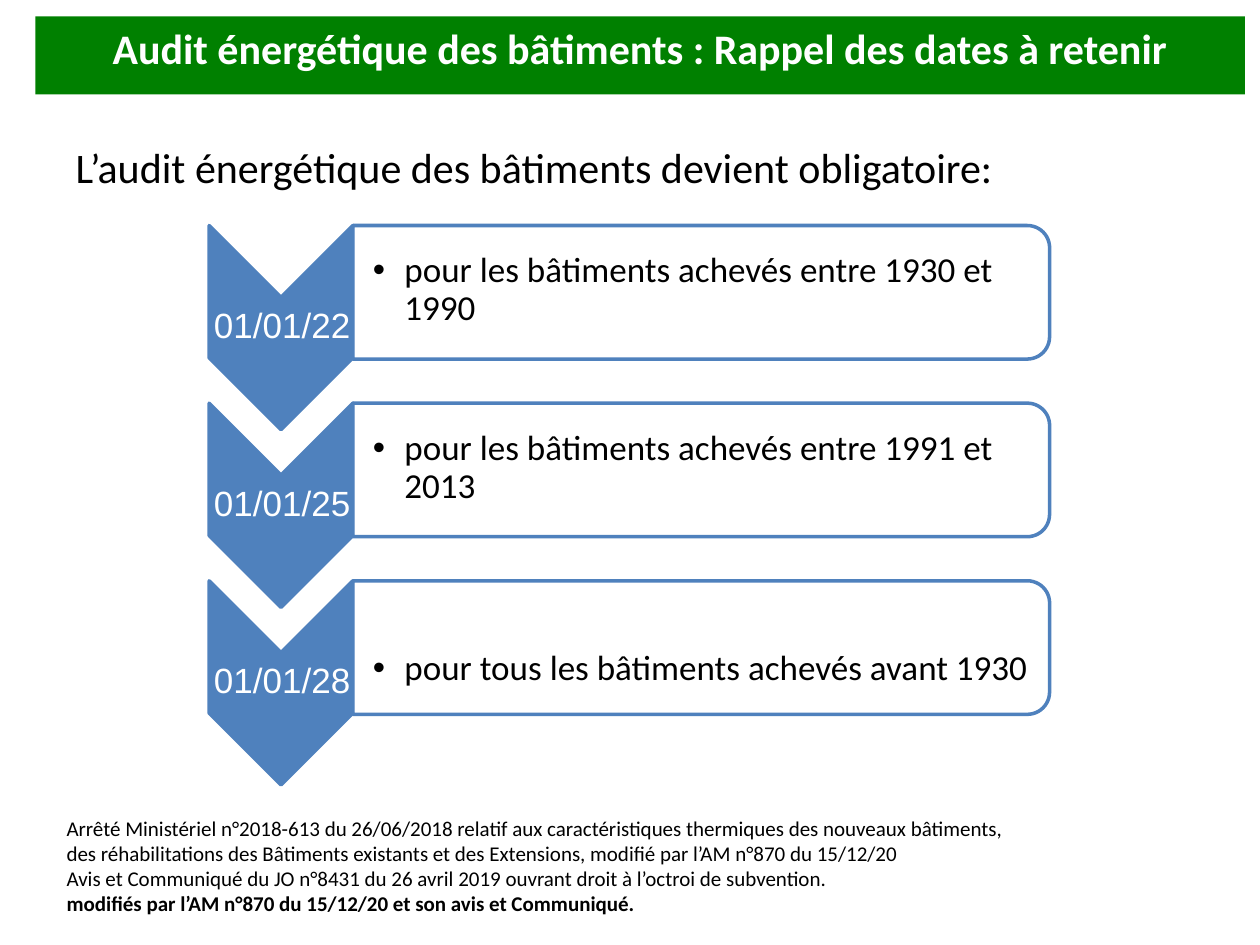
from dataclasses import dataclass

from lxml.etree import SubElement
from pptx import Presentation
from pptx.dml.color import RGBColor
from pptx.enum.shapes import MSO_SHAPE
from pptx.enum.text import MSO_ANCHOR, MSO_AUTO_SIZE, PP_ALIGN
from pptx.oxml.ns import qn
from pptx.util import Inches, Pt


@dataclass(frozen=True)
class Theme:
    green: RGBColor = RGBColor(0, 128, 0)
    blue: RGBColor = RGBColor(79, 129, 189)
    white: RGBColor = RGBColor(255, 255, 255)
    black: RGBColor = RGBColor(0, 0, 0)
    head: int = 24
    step: int = 20
    note: int = 12
    sans: str = "Calibri"
    date: str = "Arial"


THEME = Theme()
TITLE = "Audit énergétique des bâtiments : Rappel des dates à retenir"
LEAD = "L’audit énergétique des bâtiments devient obligatoire:"
# Date, text, top inset of the text
STEPS = [
    ("01/01/22", "pour les bâtiments achevés entre 1930 et 1990", 0.01),
    ("01/01/25", "pour les bâtiments achevés entre 1991 et 2013", 0.01),
    ("01/01/28", "pour tous les bâtiments achevés avant 1930", 0.38),
]
NOTES = [
    "Arrêté Ministériel n°2018-613 du 26/06/2018 relatif aux caractéristiques "
    "thermiques des nouveaux bâtiments, des réhabilitations des Bâtiments "
    "existants et des Extensions, modifié par l’AM n°870 du 15/12/20",
    "Avis et Communiqué du JO n°8431 du 26 avril 2019 ouvrant droit à l’octroi "
    "de subvention.",
    "modifiés par l’AM n°870 du 15/12/20 et son avis et Communiqué.",
]
TOP, PITCH = 1.79, 1.41


def style(para, size, color=THEME.black, face=THEME.sans, bold=False):
    font = para.font
    font.size, font.name, font.bold = Pt(size), face, bold
    font.color.rgb = color


def indent(para, left, hang, mark=None):
    """Set the indent of a paragraph and its bullet, if any."""
    props = para._p.get_or_add_pPr()
    props.set("marL", str(Inches(left)))
    props.set("indent", str(Inches(-hang)))
    if mark:
        SubElement(props, qn("a:buFont"), typeface=THEME.date)
        SubElement(props, qn("a:buChar"), char=mark)
    else:
        SubElement(props, qn("a:buNone"))


def place(shape, left, top, width, height):
    shape.left, shape.top = Inches(left), Inches(top)
    shape.width, shape.height = Inches(width), Inches(height)


def add_head(slide):
    """Fill the title bar and the lead sentence."""
    title, body = slide.shapes.title, slide.placeholders[1]
    place(title, 0.28, 0.13, 9.6, 0.62)
    place(body, 0.5, 1.07, 9, 4.95)
    title.fill.solid()
    title.fill.fore_color.rgb = THEME.green
    for shape, text in ((title, TITLE), (body, LEAD)):
        frame = shape.text_frame
        frame.text = text
        frame.auto_size = MSO_AUTO_SIZE.NONE
        frame.vertical_anchor = MSO_ANCHOR.TOP
    name, lead = title.text_frame.paragraphs[0], body.text_frame.paragraphs[0]
    name.alignment = PP_ALIGN.CENTER
    style(name, THEME.head, THEME.white, bold=True)
    indent(lead, 0, 0)
    lead.space_before = Pt(0)
    style(lead, THEME.head)


def add_turned(slide, kind, left, top, width, height, color):
    """Add a shape turned by 90° that covers the given area."""
    shift = (width - height) / 2
    shape = slide.shapes.add_shape(
        kind, Inches(left + shift), Inches(top - shift),
        Inches(height), Inches(width))
    shape.rotation = 90
    shape.shadow.inherit = False
    shape.fill.solid()
    shape.fill.fore_color.rgb = color
    shape.line.color.rgb = THEME.blue
    shape.line.width = Pt(2)
    return shape


def add_label(slide, text, left, top, width, height, inset=0.01, head=0.01):
    """Add a centred-height text box and return its paragraph."""
    box = slide.shapes.add_textbox(
        Inches(left), Inches(top), Inches(width), Inches(height))
    frame = box.text_frame
    frame.word_wrap = True
    frame.vertical_anchor = MSO_ANCHOR.MIDDLE
    frame.margin_left, frame.margin_top = Inches(inset), Inches(head)
    frame.margin_right = frame.margin_bottom = Inches(0.01)
    para = frame.paragraphs[0]
    para.text = text
    para.line_spacing = 0.9
    return para


def add_step(slide, top, date, text, head):
    """Add one chevron with its date and the panel beside it."""
    add_turned(slide, MSO_SHAPE.CHEVRON, 1.66, top, 1.14, 1.62, THEME.blue)
    day = add_label(slide, date, 1.67, top + 0.56, 1.14, 0.49)
    day.alignment = PP_ALIGN.CENTER
    style(day, THEME.step, THEME.white, THEME.date)

    panel = add_turned(slide, MSO_SHAPE.ROUND_2_SAME_RECTANGLE,
                       2.8, top, 5.53, 1.06, THEME.white)
    tint = panel._element.spPr.find(qn("a:solidFill"))[0]
    SubElement(tint, qn("a:alpha"), val="90000")
    item = add_label(slide, text, 2.8, top + 0.04, 5.48, 0.95, 0.16, head)
    indent(item, 0.25, 0.25, "•")
    style(item, THEME.step)


def add_notes(slide):
    """Add the legal references, the last one in bold."""
    box = slide.shapes.add_textbox(
        Inches(0.43), Inches(6.42), Inches(7.8), Inches(1.11))
    frame = box.text_frame
    frame.word_wrap = True
    frame.auto_size = MSO_AUTO_SIZE.SHAPE_TO_FIT_TEXT
    frame.text = "\n".join(NOTES)
    for para in frame.paragraphs:
        style(para, THEME.note, bold=para.text == NOTES[-1])


def main():
    deck = Presentation()
    deck.slide_width, deck.slide_height = Inches(10), Inches(7.5)
    slide = deck.slides.add_slide(deck.slide_layouts[1])
    add_head(slide)
    for row, step in enumerate(STEPS):
        add_step(slide, TOP + row * PITCH, *step)
    add_notes(slide)
    deck.save("out.pptx")


if __name__ == "__main__":
    main()
